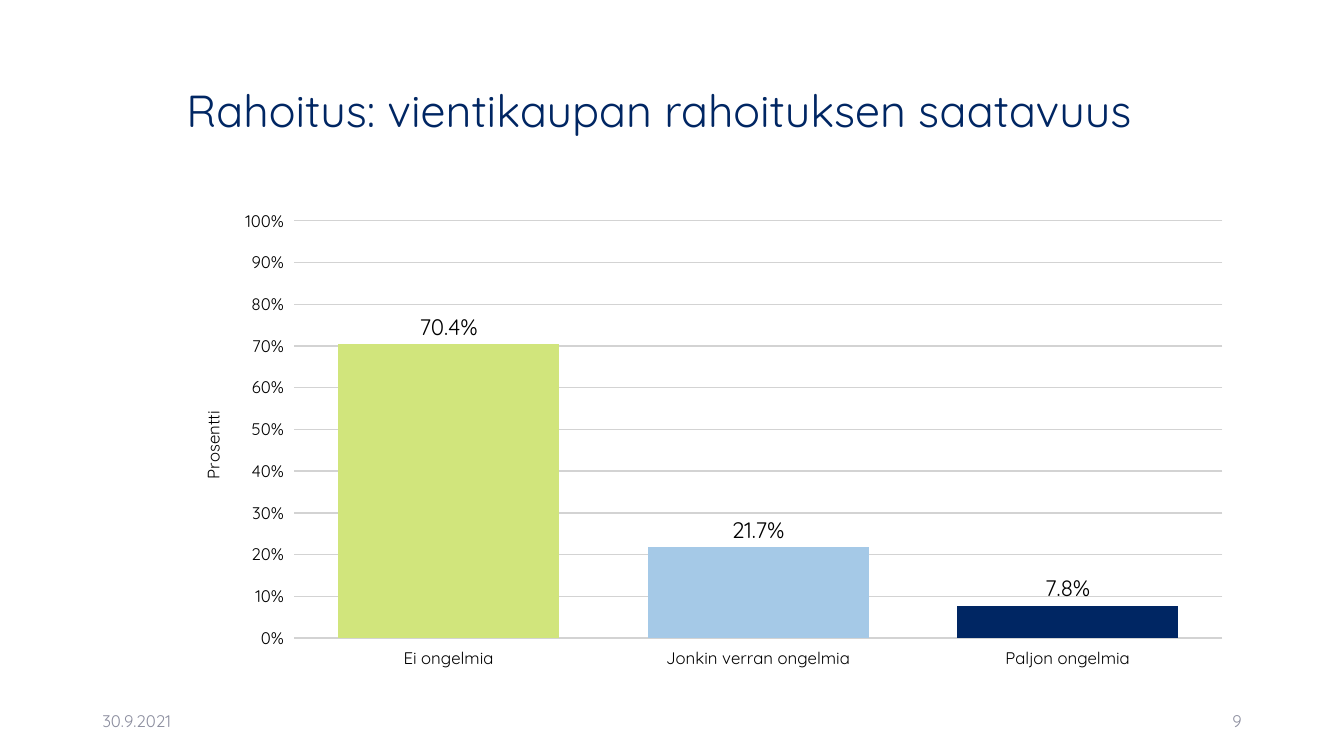
from dataclasses import dataclass

from lxml.etree import SubElement
from pptx import Presentation
from pptx.chart.chart import Chart
from pptx.chart.data import CategoryChartData
from pptx.dml.color import RGBColor
from pptx.enum.chart import XL_CHART_TYPE, XL_LABEL_POSITION, XL_TICK_MARK
from pptx.enum.text import MSO_ANCHOR, PP_ALIGN
from pptx.oxml.ns import qn
from pptx.slide import Slide
from pptx.util import Pt

FONT = "Quicksand"
COLORS = {
    "navy": "002663",
    "lime": "D1E57C",
    "sky": "A5C9E7",
    "grid": "D3D3D3",
    "footer": "8C8E9F",
    "black": "000000",
}


@dataclass
class Label:
    text: str
    left: float
    top: float
    width: float
    height: float
    size: float
    color: str
    align: PP_ALIGN = PP_ALIGN.LEFT
    line_spacing: float = 1.0


@dataclass
class Answer:
    category: str
    share: float
    color: str


LABELS = [
    Label("Rahoitus: vientikaupan rahoituksen saatavuus",
          126, 28.8, 762.5, 104.4, 32, "navy", line_spacing=0.9),
    Label("30.9.2021", 66, 500.5, 216, 28.8, 12, "footer"),
    Label("9", 678, 500.5, 216, 28.8, 12, "footer", PP_ALIGN.RIGHT),
]
ANSWERS = [
    Answer("Ei ongelmia", 0.704, "lime"),
    Answer("Jonkin verran ongelmia", 0.217, "sky"),
    Answer("Paljon ongelmia", 0.078, "navy"),
]


def rgb(name: str) -> RGBColor:
    return RGBColor.from_string(COLORS[name])


def style_font(font, size: float, color: str) -> None:
    font.name = FONT
    font.size = Pt(size)
    font.bold = False
    font.color.rgb = rgb(color)


def add_label(slide: Slide, label: Label) -> None:
    frame = slide.shapes.add_textbox(
        Pt(label.left), Pt(label.top), Pt(label.width), Pt(label.height)
    ).text_frame
    frame.word_wrap = True
    frame.vertical_anchor = MSO_ANCHOR.MIDDLE
    frame.text = label.text
    paragraph = frame.paragraphs[0]
    paragraph.alignment = label.align
    paragraph.line_spacing = label.line_spacing
    style_font(paragraph.runs[0].font, label.size, label.color)


def place(parent, index: int, settings: dict[str, object]) -> None:
    for previous in parent.findall(qn("c:layout")):
        parent.remove(previous)
    layout = SubElement(parent, qn("c:layout"))
    manual = SubElement(layout, qn("c:manualLayout"))
    for key, value in settings.items():
        SubElement(manual, qn(f"c:{key}")).set("val", str(value))
    parent.insert(index, layout)


def style_axes(chart: Chart) -> None:
    percent = chart.value_axis
    for axis in (chart.category_axis, percent):
        axis.major_tick_mark = XL_TICK_MARK.OUTSIDE
        axis.minor_tick_mark = XL_TICK_MARK.NONE
        axis.format.line.fill.background()
        style_font(axis.tick_labels.font, 12, "black")
    percent.minimum_scale = 0
    percent.maximum_scale = 1
    percent.major_unit = 0.1
    percent.tick_labels.number_format = "0%"
    percent.tick_labels.number_format_is_linked = False
    percent.major_gridlines.format.line.color.rgb = rgb("grid")
    percent.major_gridlines.format.line.width = Pt(1)
    heading = percent.axis_title
    heading.text_frame.text = "Prosentti"
    style_font(heading.text_frame.paragraphs[0].runs[0].font, 12, "black")
    place(heading.element, 1,
          {"xMode": "edge", "yMode": "edge", "x": 0.02, "y": 0.43})


def add_answers_chart(slide: Slide, answers: list[Answer]) -> None:
    data = CategoryChartData(number_format="0.0%")
    data.categories = [answer.category for answer in answers]
    data.add_series("Series 1", [answer.share for answer in answers])
    chart = slide.shapes.add_chart(
        XL_CHART_TYPE.COLUMN_CLUSTERED,
        Pt(126), Pt(144), Pt(762.5), Pt(342.7), data
    ).chart
    chart.has_legend = False
    chart.has_title = False
    style_font(chart.font, 12, "black")
    style_axes(chart)

    plot = chart.plots[0]
    plot.gap_width = 40
    plot.vary_by_categories = False
    shares = plot.series[0]
    shares.format.fill.solid()
    shares.format.fill.fore_color.rgb = rgb(answers[0].color)
    for index, answer in enumerate(answers[1:], start=1):
        fill = shares.points[index].format.fill
        fill.solid()
        fill.fore_color.rgb = rgb(answer.color)

    percentages = shares.data_labels
    percentages.show_value = True
    percentages.position = XL_LABEL_POSITION.OUTSIDE_END
    percentages.number_format = "0.0%"
    percentages.number_format_is_linked = False
    style_font(percentages.font, 16, "black")

    plot_area = chart.element.find(f".//{qn('c:plotArea')}")
    place(plot_area, 0, {
        "layoutTarget": "inner", "xMode": "edge", "yMode": "edge",
        "x": 0.11, "y": 0.04, "w": 0.87, "h": 0.87,
    })


def main() -> None:
    presentation = Presentation()
    presentation.slide_width = Pt(960)
    presentation.slide_height = Pt(540)
    slide = presentation.slides.add_slide(presentation.slide_layouts[6])
    for label in LABELS:
        add_label(slide, label)
    add_answers_chart(slide, ANSWERS)
    presentation.save("out.pptx")


if __name__ == "__main__":
    main()
